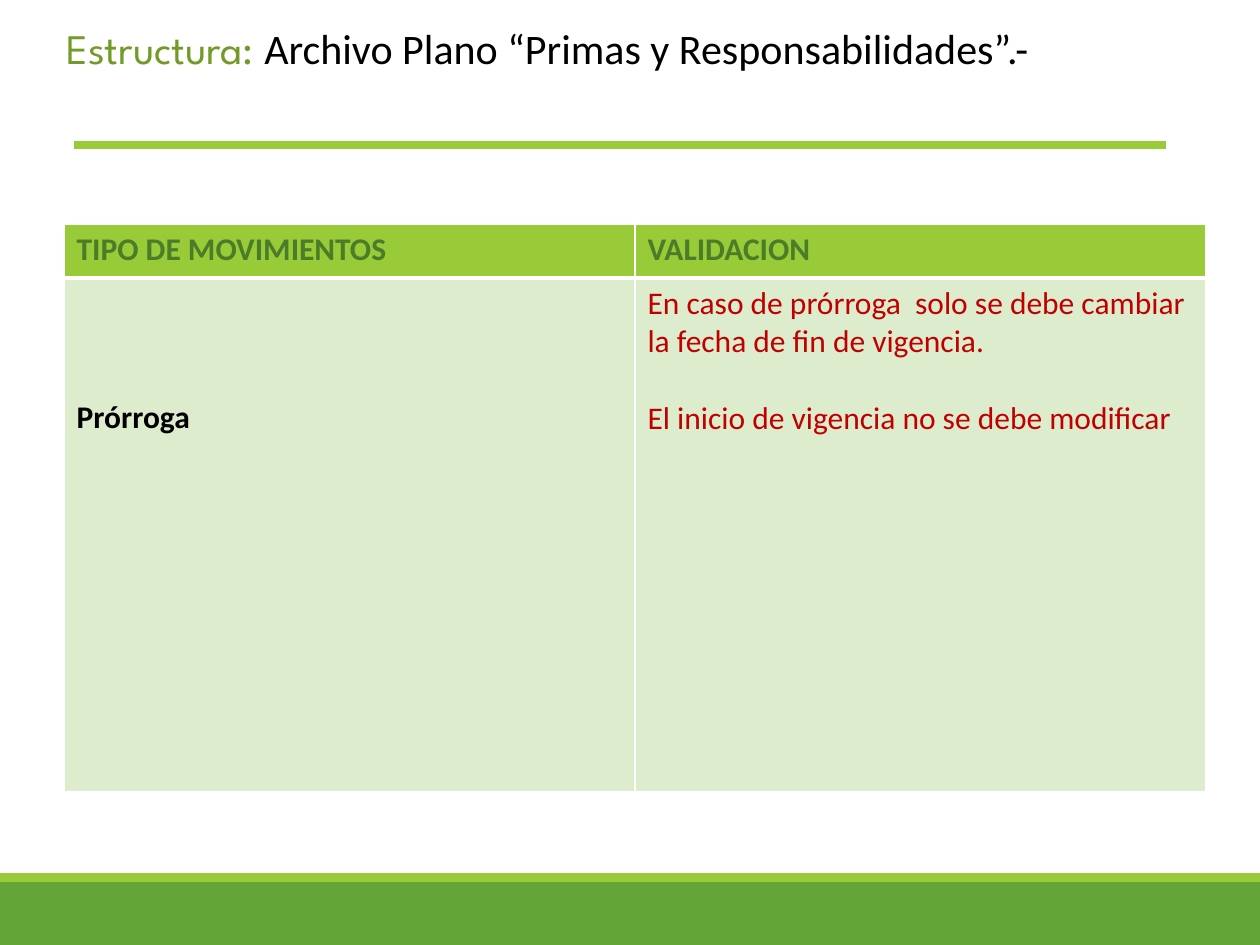
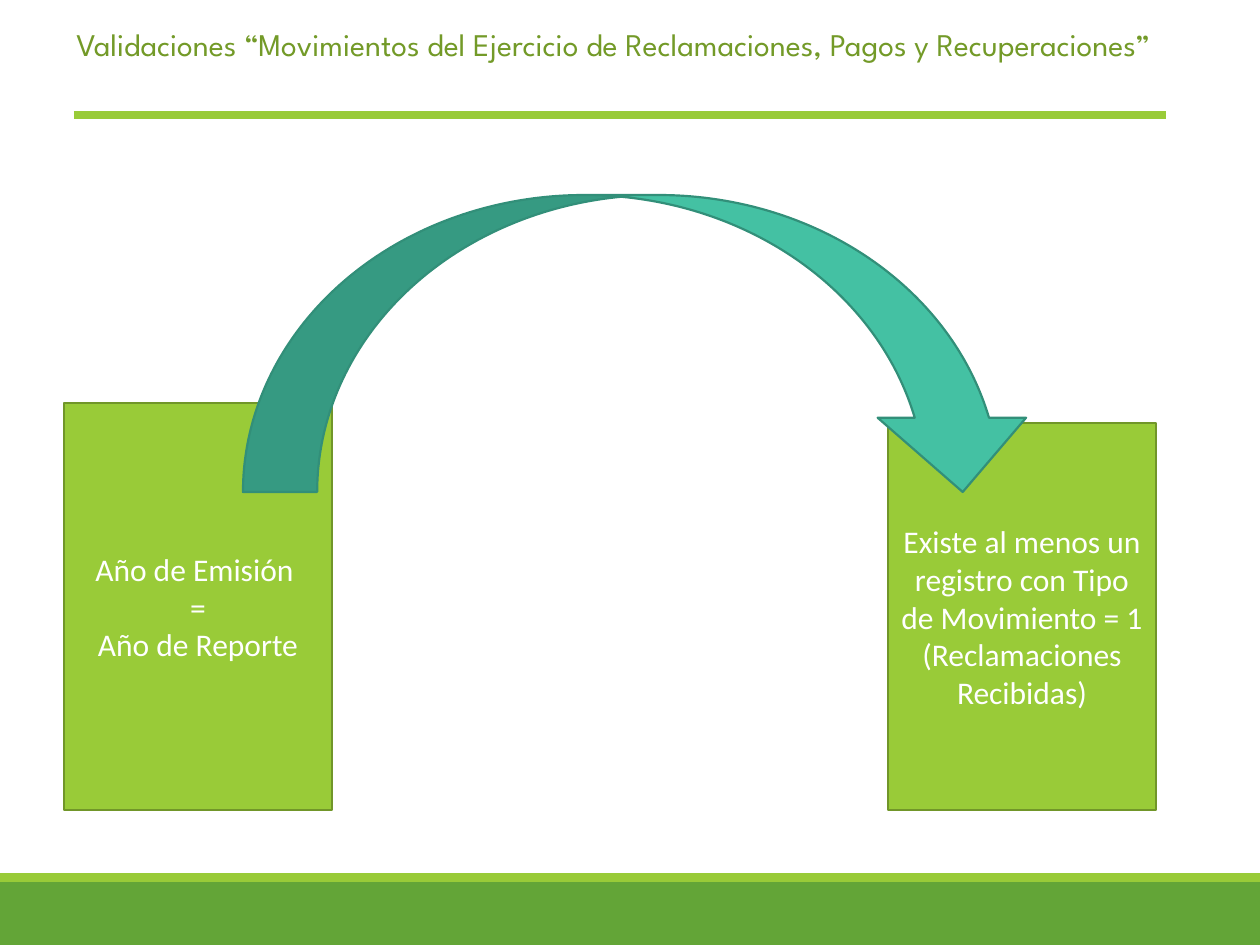
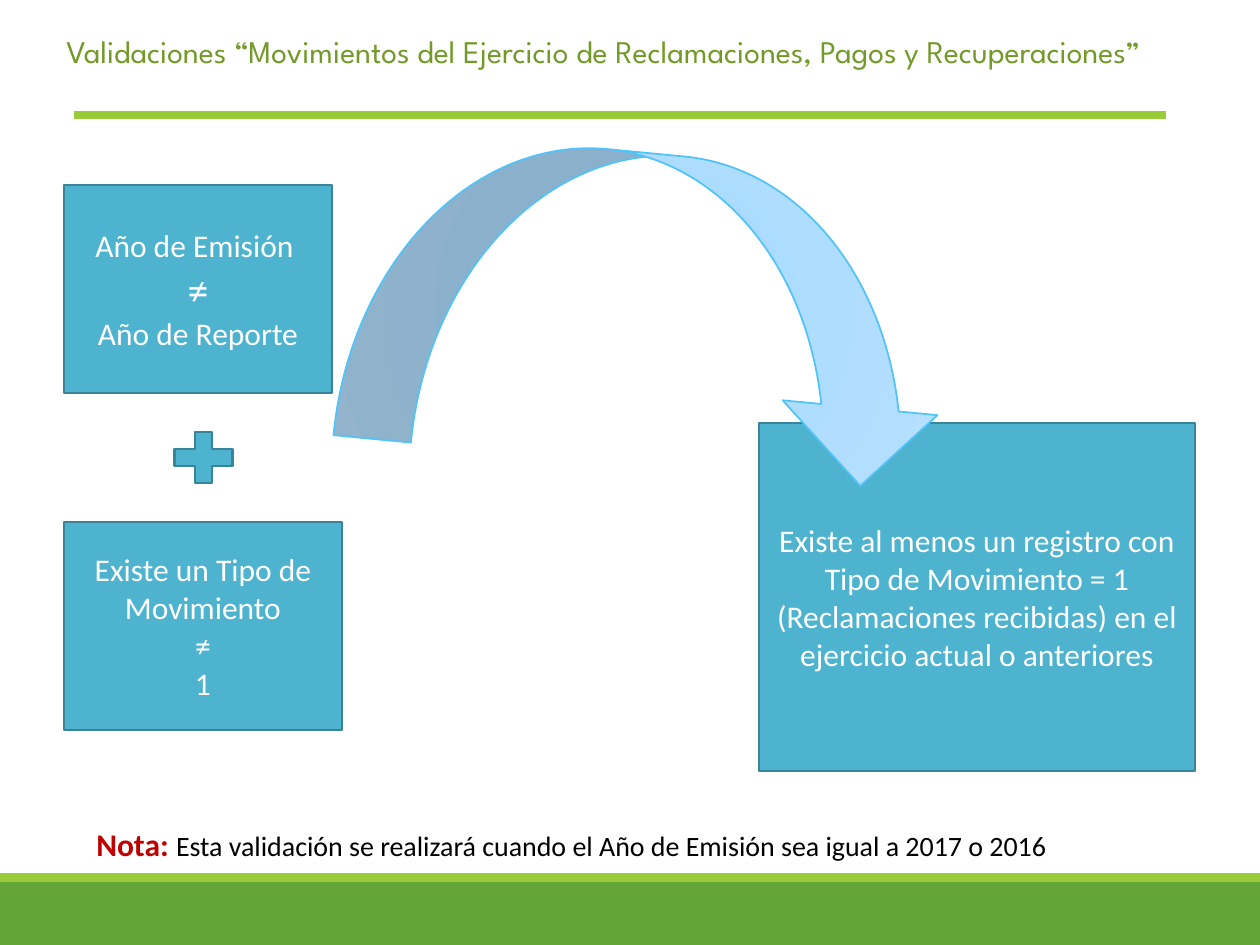
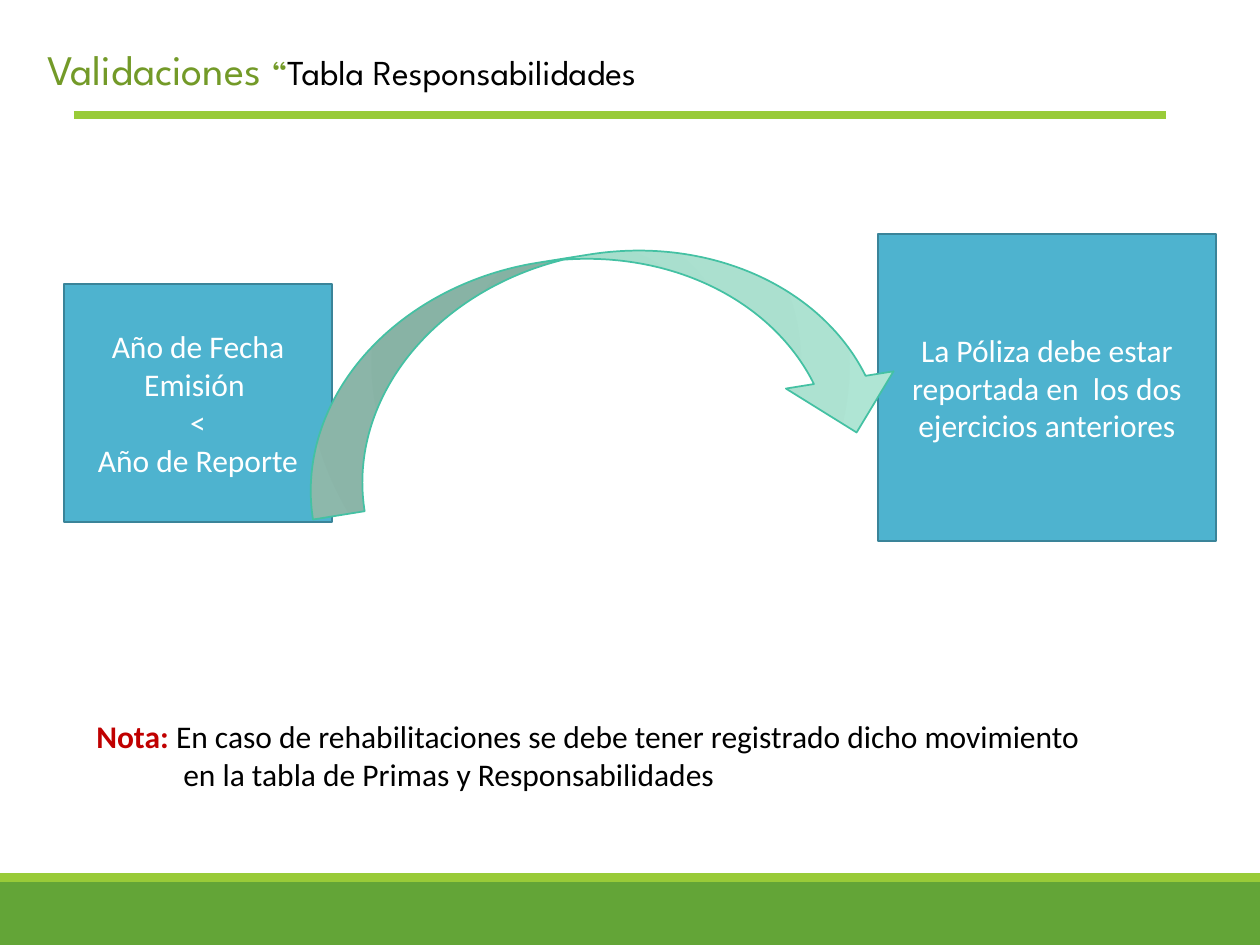
from pptx import Presentation
from pptx.dml.color import RGBColor
from pptx.enum.shapes import MSO_CONNECTOR, MSO_SHAPE
from pptx.enum.text import MSO_ANCHOR, MSO_AUTO_SIZE, PP_ALIGN
from pptx.oxml import parse_xml
from pptx.oxml.ns import nsdecls, qn
from pptx.util import Emu, Pt

RECTANGLE = MSO_SHAPE.RECTANGLE
PROCESS = MSO_SHAPE.FLOWCHART_PROCESS
CURVED_ARROW = MSO_SHAPE.CURVED_DOWN_ARROW
PLUS = MSO_SHAPE.MATH_PLUS
STRAIGHT = MSO_CONNECTOR.STRAIGHT
MIDDLE = MSO_ANCHOR.MIDDLE
GROW = MSO_AUTO_SIZE.SHAPE_TO_FIT_TEXT
LEFT, CENTER, JUSTIFY = PP_ALIGN.LEFT, PP_ALIGN.CENTER, PP_ALIGN.JUSTIFY

SCALE = 914400 / 126
WIDTH, HEIGHT = 1260, 945
BODY_FONT, TITLE_FONT = "Calibri", "League Spartan"
COLORS = {
    "lime": "99CB38",
    "lime_edge": "719629",
    "green": "63A537",
    "title": "739A28",
    "header_text": "4A7C29",
    "cell": "DEECCE",
    "blue": "4EB3CF",
    "blue_edge": "3A8499",
    "teal": "44C1A3",
    "teal_edge": "328F79",
    "sky_edge": "51C3F9",
    "red": "C00000",
    "black": "000000",
    "white": "FFFFFF",
}
SKY_STOPS = ((0, "99D5FE"), (45, "AEDDFF"), (100, "B8E1FF"))
MINT_STOPS = ((0, "9AD9C5"), (45, "ABE0CF"), (100, "B1E7D6"))
CLAIMS_TITLE = "Validaciones “Movimientos del Ejercicio de Reclamaciones, Pagos y Recuperaciones”"


def px(length):
    return Emu(round(length * SCALE))


def place(box):
    return [px(length) for length in box]


def color(name):
    return RGBColor.from_string(COLORS[name])


def add_run(paragraph, text, size=18, tint="black", font=BODY_FONT, bold=False):
    run = paragraph.add_run()
    run.text = text
    run.font.size = Pt(size)
    run.font.name = font
    run.font.bold = bold
    run.font.color.rgb = color(tint)


def add_shape(slide, kind, box, fill, edge=None, edge_width=1.25):
    shape = slide.shapes.add_shape(kind, *place(box))
    shape.shadow.inherit = False
    shape.fill.solid()
    shape.fill.fore_color.rgb = color(fill)
    if edge:
        shape.line.color.rgb = color(edge)
        shape.line.width = Pt(edge_width)
    else:
        shape.line.fill.background()
    return shape


def add_text(slide, box, alignment, runs, hanging=0):
    text_box = slide.shapes.add_textbox(*place(box))
    frame = text_box.text_frame
    frame.word_wrap = True
    frame.auto_size = GROW
    paragraph = frame.paragraphs[0]
    paragraph.alignment = alignment
    if hanging:
        properties = paragraph._p.get_or_add_pPr()
        properties.set("marL", str(px(hanging)))
        properties.set("indent", str(-px(hanging)))
    for text, style in runs:
        add_run(paragraph, text, **style)


def add_title(slide, box, runs, rule_top=115):
    add_text(slide, box, JUSTIFY, runs)
    rule = slide.shapes.add_connector(
        STRAIGHT, px(74), px(rule_top), px(1166), px(rule_top))
    rule.line.color.rgb = color("lime")
    rule.line.width = Pt(4.5)
    rule._element.spPr.append(parse_xml(f"<a:effectLst {nsdecls('a')}/>"))


def add_claims_title(slide, left, top):
    style = {"tint": "title", "font": TITLE_FONT}
    add_title(slide, (left, top, 1101, 89), [(CLAIMS_TITLE, style)])


def add_note(slide, box, alignment, text, size=18):
    label = ("Nota: ", {"tint": "red", "bold": True})
    add_text(slide, box, alignment, [label, (text, {"size": size})], hanging=87)


def add_process(slide, box, lines, fill="blue", sizes=None):
    shape = add_shape(slide, PROCESS, box, fill, f"{fill}_edge")
    frame = shape.text_frame
    frame.word_wrap = True
    frame.vertical_anchor = MIDDLE
    for index, line in enumerate(lines):
        paragraph = frame.paragraphs[0] if index == 0 else frame.add_paragraph()
        paragraph.alignment = CENTER
        add_run(paragraph, line, (sizes or {}).get(line, 18), "white")


def add_gradient_arrow(slide, box, rotation, stops, edge):
    arrow = add_shape(slide, CURVED_ARROW, box, "white", edge, 1)
    arrow.rotation = rotation
    stop_list = "".join(
        f'<a:gs pos="{position * 1000}"><a:srgbClr val="{tint}"/></a:gs>'
        for position, tint in stops)
    gradient = parse_xml(
        f'<a:gradFill {nsdecls("a")} rotWithShape="1"><a:gsLst>{stop_list}</a:gsLst>'
        '<a:path path="circle"><a:fillToRect l="100000" t="100000" r="100000" b="100000"/>'
        "</a:path></a:gradFill>")
    properties = arrow._element.spPr
    properties.replace(properties.find(qn("a:solidFill")), gradient)
    return arrow


def set_borders(cell, bottom_width):
    properties = cell._tc.get_or_add_tcPr()
    widths = {"lnL": 1, "lnR": 1, "lnT": 1, "lnB": bottom_width}
    for index, (side, width) in enumerate(widths.items()):
        properties.insert(index, parse_xml(
            f'<a:{side} {nsdecls("a")} w="{Pt(width)}"><a:solidFill>'
            f'<a:srgbClr val="{COLORS["white"]}"/></a:solidFill></a:{side}>'))


def add_movement_table(slide, box):
    table = slide.shapes.add_table(2, 2, *place(box)).table
    table.horz_banding = False
    header_height = 54
    table.rows[0].height = px(header_height)
    table.rows[1].height = px(box[3] - header_height)
    header = {"tint": "header_text", "bold": True}
    rule = {"tint": "red"}
    rows = (
        ((("TIPO DE MOVIMIENTOS",), header), (("VALIDACION",), header)),
        ((("Prórroga",), {"bold": True}),
         (("En caso de prórroga  solo se debe cambiar la fecha de fin de vigencia.",
           "El inicio de vigencia no se debe modificar"), rule)),
    )
    for row_index, row in enumerate(rows):
        for column_index, (lines, style) in enumerate(row):
            cell = table.cell(row_index, column_index)
            cell.fill.solid()
            cell.fill.fore_color.rgb = color("cell" if row_index else "lime")
            set_borders(cell, 1 if row_index else 3)
            frame = cell.text_frame
            for index, line in enumerate(lines):
                paragraph = frame.add_paragraph() if index else frame.paragraphs[0]
                if index:
                    paragraph.space_before = Pt(22)
                add_run(paragraph, line, **style)
    table.cell(1, 0).margin_top = px(121)


def add_base_slide(presentation):
    slide = presentation.slides.add_slide(presentation.slide_layouts[6])
    add_shape(slide, RECTANGLE, (0, 882, WIDTH, 63), "green")
    add_shape(slide, RECTANGLE, (0, 873, WIDTH, 9), "lime")
    return slide


def build_structure(slide):
    add_title(slide, (54, 16, 1101, 63), [
        ("Estructura: ", {"size": 24, "tint": "title", "font": TITLE_FONT}),
        ("Archivo Plano “Primas y Responsabilidades”.- ", {"size": 24}),
    ], rule_top=145)
    add_movement_table(slide, (64, 224, 1142, 568))


def build_same_year(slide):
    add_claims_title(slide, 64, 19)
    add_process(slide, (64, 403, 268, 407),
                ["Año de Emisión ", "=", "Año de Reporte"], "lime")
    add_process(slide, (888, 423, 268, 387), [
        "Existe al menos un registro con Tipo de Movimiento = 1 (Reclamaciones Recibidas)",
    ], "lime")
    add_shape(slide, CURVED_ARROW, (243, 195, 794, 297), "teal", "teal_edge")


def build_other_year(slide):
    add_claims_title(slide, 54, 26)
    add_process(slide, (64, 185, 268, 208),
                ["Año de Emisión ", "≠", "Año de Reporte"], sizes={"≠": 24})
    add_process(slide, (759, 423, 436, 348), [
        "Existe al menos un registro con Tipo de Movimiento = 1 "
        "(Reclamaciones recibidas) en el ejercicio actual o anteriores",
    ])
    add_gradient_arrow(slide, (347, 154, 607, 311), 5.5, SKY_STOPS, "sky_edge")
    add_process(slide, (64, 522, 278, 208),
                ["Existe un Tipo de", "Movimiento", "≠", "1"])
    add_shape(slide, PLUS, (164, 423, 79, 69), "blue", "blue_edge")
    add_note(slide, (84, 819, 1032, 50), JUSTIFY,
             "Esta validación se realizará cuando el Año de Emisión sea igual a 2017 o 2016",
             size=16)


def build_responsibilities(slide):
    heading = {"tint": "title", "font": TITLE_FONT}
    add_title(slide, (35, 37, 1101, 106), [
        ("Validaciones ", {**heading, "size": 24}),
        ("“", {**heading, "size": 20}),
        ("Tabla Responsabilidades", {"size": 20, "font": TITLE_FONT}),
    ])
    add_process(slide, (878, 234, 338, 307),
                ["La Póliza debe estar reportada en  los dos ejercicios anteriores"])
    add_process(slide, (64, 284, 268, 238),
                ["Año de Fecha Emisión ", "<", "Año de Reporte"])
    arrow = add_gradient_arrow(slide, (292, 255, 605, 218), 350.9, MINT_STOPS, "teal")
    arrow.adjustments[0] = 0.24
    add_note(slide, (84, 711, 1032, 89), LEFT,
             "En caso de rehabilitaciones se debe tener registrado dicho movimiento "
             "en la tabla de Primas y Responsabilidades")


def main():
    presentation = Presentation()
    presentation.slide_width = px(WIDTH)
    presentation.slide_height = px(HEIGHT)
    for build in (build_structure, build_same_year, build_other_year, build_responsibilities):
        build(add_base_slide(presentation))
    presentation.save("out.pptx")


if __name__ == "__main__":
    main()
